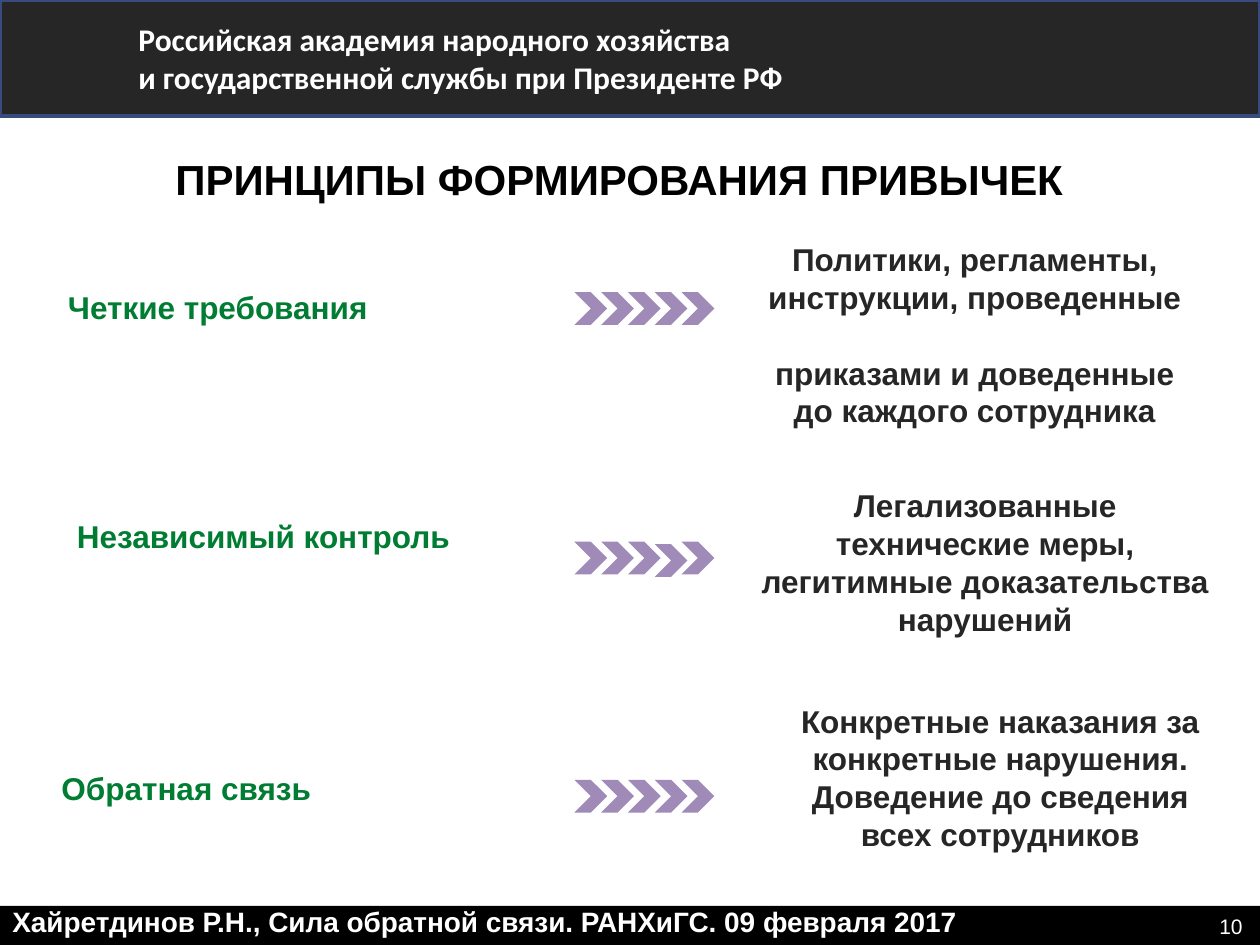
from dataclasses import dataclass

import pptx
import pptx.dml.color
import pptx.enum.shapes
import pptx.enum.text
import pptx.util

Cm = pptx.util.Cm
Pt = pptx.util.Pt
RGBColor = pptx.dml.color.RGBColor
Align = pptx.enum.text.PP_ALIGN
Anchor = pptx.enum.text.MSO_ANCHOR
Preset = pptx.enum.shapes.MSO_SHAPE

BLACK = RGBColor(0x00, 0x00, 0x00)
WHITE = RGBColor(0xFF, 0xFF, 0xFF)
CHARCOAL = RGBColor(0x26, 0x26, 0x26)
NAVY = RGBColor(0x37, 0x4B, 0x7F)
GREEN = RGBColor(0x00, 0x7D, 0x32)
LILAC = RGBColor(0x9F, 0x8A, 0xB8)

CHEVRON_COUNT = 5
CHEVRON_LEFT = 11.58
CHEVRON_STEP = 0.54
CHEVRON_SIZE = 0.66


@dataclass
class Label:
    lines: list[str]
    left: float
    top: float
    width: float
    height: float
    color: RGBColor
    size: float = 18
    bold: bool = True
    align: Align = Align.LEFT
    anchor: Anchor = Anchor.TOP
    wrap: bool = True
    font: str = "Arial"


@dataclass
class Principle:
    name: Label
    measure: Label
    chevron_top: float
    fourth_drop: float = 0


PRINCIPLES = [
    Principle(
        Label(["Четкие требования"], 1.12, 5.69, 9.65, 1.02, GREEN),
        Label(["Политики, регламенты,", "инструкции, проведенные",
               "приказами и доведенные", "до каждого сотрудника"],
              15.19, 4.72, 8.92, 3.33, CHARCOAL, align=Align.CENTER, wrap=False),
        5.89,
    ),
    Principle(
        Label(["Независимый контроль"], 1.3, 10.29, 8.99, 1.8, GREEN),
        Label(["Легализованные", "технические меры,",
               "легитимные доказательства", "нарушений"],
              14.12, 9.68, 11.48, 3.33, CHARCOAL, align=Align.CENTER),
        10.92, 0.05,
    ),
    Principle(
        Label(["Обратная связь"], 0.99, 15.37, 10.29, 1.02, GREEN),
        Label(["Конкретные наказания за", "конкретные нарушения.",
               "Доведение до сведения всех сотрудников"],
              15.67, 14.02, 8.99, 3.33, CHARCOAL, align=Align.CENTER),
        15.72,
    ),
]


def add_label(page, label: Label):
    box = page.shapes.add_textbox(
        Cm(label.left), Cm(label.top), Cm(label.width), Cm(label.height))
    frame = box.text_frame
    frame.word_wrap = label.wrap
    frame.vertical_anchor = label.anchor
    frame.text = "\n".join(label.lines)
    for para in frame.paragraphs:
        para.alignment = label.align
        para.font.name = label.font
        para.font.size = Pt(label.size)
        para.font.bold = label.bold
        para.font.color.rgb = label.color
    return box


def add_filled(shapes, preset: Preset, left: float, top: float,
               width: float, height: float, color: RGBColor):
    shape = shapes.add_shape(preset, Cm(left), Cm(top), Cm(width), Cm(height))
    shape.shadow.inherit = False
    shape.fill.solid()
    shape.fill.fore_color.rgb = color
    shape.line.fill.background()
    return shape


def add_chevrons(page, principle: Principle) -> None:
    group = page.shapes.add_group_shape()
    for index in range(CHEVRON_COUNT):
        drop = principle.fourth_drop if index == 3 else 0
        add_filled(group.shapes, Preset.CHEVRON,
                   CHEVRON_LEFT + index * CHEVRON_STEP,
                   principle.chevron_top + drop,
                   CHEVRON_SIZE, CHEVRON_SIZE, LILAC)


def main() -> None:
    deck = pptx.Presentation()
    deck.slide_width = Cm(25.4)
    deck.slide_height = Cm(19.05)
    page = deck.slides.add_slide(deck.slide_layouts[6])

    add_filled(page.shapes, Preset.RECTANGLE, 0, 18.26, 25.4, 0.79, BLACK)
    add_label(page, Label(
        ["Хайретдинов Р.Н., Сила обратной связи. РАНХиГС. 09 февраля 2017"],
        0, 18.11, 19.81, 0.94, WHITE, size=16, wrap=False))

    header = add_filled(page.shapes, Preset.RECTANGLE, 0, 0, 25.4, 2.34, CHARCOAL)
    header.line.color.rgb = NAVY
    header.line.width = Pt(2)
    add_label(page, Label(
        ["Российская академия народного хозяйства",
         "и государственной службы при Президенте РФ"],
        2.54, 0, 20, 2.34, WHITE, anchor=Anchor.MIDDLE, font="Calibri"))

    add_label(page, Label(
        ["ПРИНЦИПЫ ФОРМИРОВАНИЯ ПРИВЫЧЕК"],
        2.54, 2.97, 19.89, 2.97, BLACK, size=24, align=Align.CENTER))

    for principle in PRINCIPLES:
        add_label(page, principle.name)
        measure = add_label(page, principle.measure)
        if principle is PRINCIPLES[0]:
            measure.text_frame.paragraphs[2].space_before = Pt(21.6)
        add_chevrons(page, principle)

    add_label(page, Label(
        ["10"], 19.38, 18.29, 5.92, 0.76, WHITE, size=12, bold=False,
        align=Align.RIGHT, anchor=Anchor.MIDDLE))

    deck.save("out.pptx")


if __name__ == "__main__":
    main()
